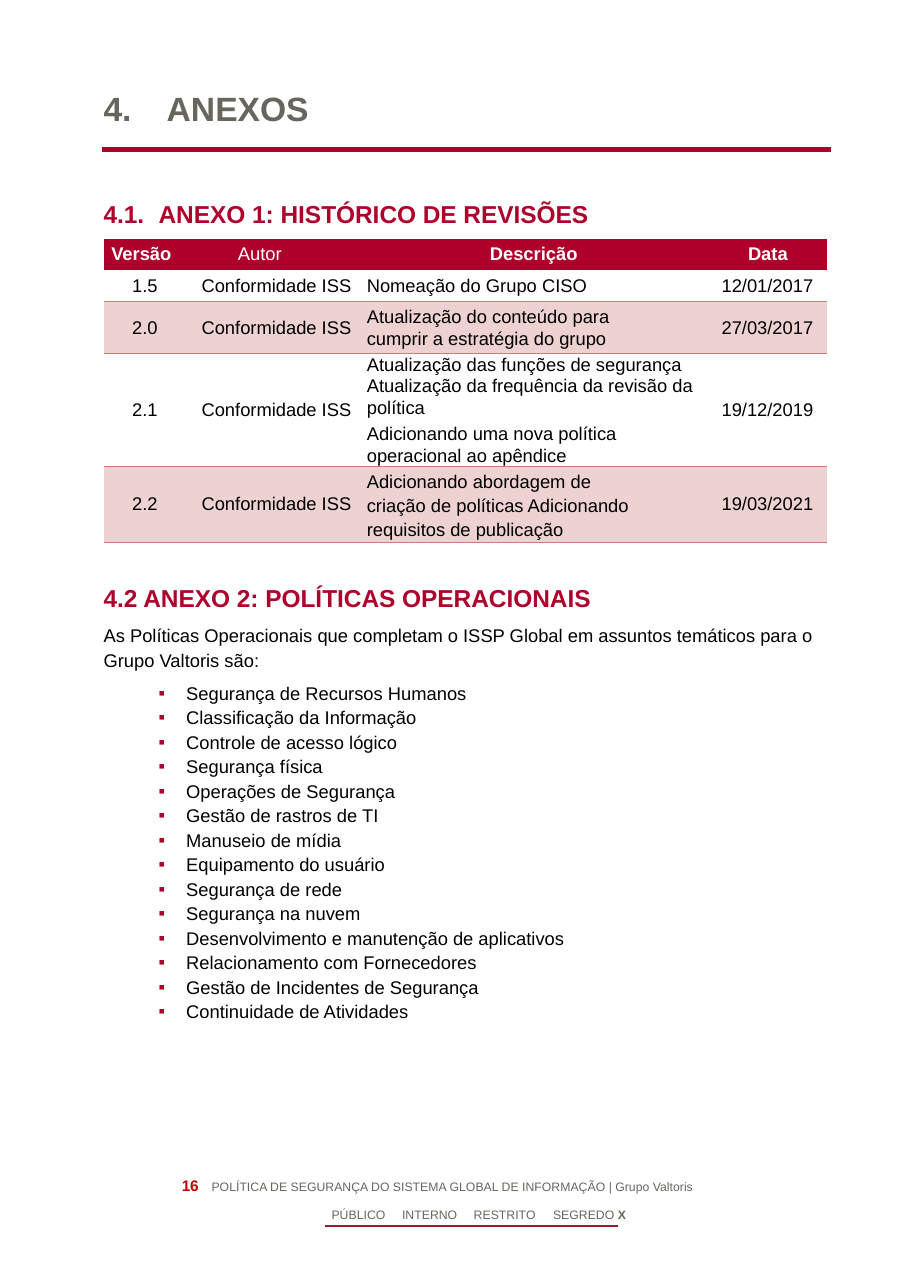
from lxml.etree import SubElement
from pptx import Presentation
from pptx.dml.color import RGBColor
from pptx.enum.shapes import MSO_CONNECTOR as Connector
from pptx.enum.text import MSO_ANCHOR as Anchor, MSO_AUTO_SIZE as AutoSize, PP_ALIGN as Align
from pptx.oxml.ns import qn
from pptx.util import Inches, Pt

COLORS = {
    "crimson": "AF002C", "footer_line": "A11731", "page_number": "C00000",
    "gray": "68665C", "black": "000000", "white": "FFFFFF",
    "band": "EED2D2", "border": "CF7A79",
}
NO_TABLE_STYLE = "{2D5ABB26-0587-4C30-8999-92F81FD0307C}"


def format_paragraph(paragraph, size, color, bold=False, bullet=None):
    """Set indent, bullet, tab stop and font of a paragraph."""
    properties = paragraph._p.get_or_add_pPr()
    properties.set("marL", str(Inches(0.75) if bullet else 0))
    properties.set("indent", str(Inches(-0.25) if bullet else 0))
    if bullet:
        bullet_color = SubElement(properties, qn("a:buClr"))
        SubElement(bullet_color, qn("a:srgbClr"), val=COLORS["crimson"])
        SubElement(properties, qn("a:buFont"), typeface="Arial")
        SubElement(properties, qn("a:buChar"), char=bullet)
    else:
        SubElement(properties, qn("a:buNone"))
    if "\t" in paragraph.text:
        tab_list = SubElement(properties, qn("a:tabLst"))
        SubElement(tab_list, qn("a:tab"), pos=str(Inches(0.5)), algn="l")
    paragraph.alignment = Align.LEFT
    font = paragraph.font
    font.name, font.size, font.bold = "Arial", Pt(size), bold
    font.color.rgb = RGBColor.from_string(COLORS[color])


def place_frame(shape, left, top, width, height):
    """Move a text shape and clear its insets."""
    shape.left, shape.top = Inches(left), Inches(top)
    shape.width, shape.height = Inches(width), Inches(height)
    frame = shape.text_frame
    frame.margin_left = frame.margin_right = frame.margin_top = frame.margin_bottom = 0
    frame.word_wrap = True
    frame.auto_size = AutoSize.NONE
    frame.vertical_anchor = Anchor.TOP
    return frame


presentation = Presentation()
presentation.slide_width, presentation.slide_height = Inches(8.26), Inches(11.69)
slide = presentation.slides.add_slide(presentation.slide_layouts[1])
shapes = slide.shapes

# Title
title_frame = place_frame(shapes.title, 0.94, 0.8, 6.6, 0.36)
title_frame.text = "4.\t ANEXOS"
format_paragraph(title_frame.paragraphs[0], 22, "gray", True)

# Rules under the title and the footer
for left, right, top, color, weight in [
    (0.93, 7.54, 1.36, "crimson", 3.1),
    (2.95, 5.61, 11.13, "footer_line", 1.6),
]:
    rule = shapes.add_connector(
        Connector.STRAIGHT, Inches(left), Inches(top), Inches(right), Inches(top))
    rule.line.color.rgb = RGBColor.from_string(COLORS[color])
    rule.line.width = Pt(weight)
    SubElement(rule._element.spPr, qn("a:effectLst"))

# Section heading, footer texts and classification levels
for text, left, top, width, height, size, color, bold in [
    ("4.1.\tANEXO 1: HISTÓRICO DE REVISÕES", 0.94, 1.81, 6.4, 0.27, 16, "crimson", True),
    ("16", 1.65, 10.68, 0.21, 0.17, 10, "page_number", True),
    ("POLÍTICA DE SEGURANÇA DO SISTEMA GLOBAL DE INFORMAÇÃO | Grupo Valtoris",
     1.92, 10.7, 4.88, 0.13, 8, "gray", False),
    ("PÚBLICO", 3.01, 10.96, 0.6, 0.13, 8, "gray", False),
    ("INTERNO", 3.65, 10.96, 0.6, 0.13, 8, "gray", False),
    ("RESTRITO", 4.3, 10.96, 0.65, 0.13, 8, "gray", False),
    ("SEGREDO ", 5.02, 10.96, 0.9, 0.13, 8, "gray", False),
]:
    frame = place_frame(shapes.add_textbox(0, 0, 0, 0), left, top, width, height)
    frame.text = text
    format_paragraph(frame.paragraphs[0], size, color, bold)
chosen_level = frame.paragraphs[0].add_run()
chosen_level.text = "X"
chosen_level.font.bold = True

# Revision table
author = "Conformidade ISS"
rows = [
    ("Versão", "Autor", "Descrição", "Data"),
    ("1.5", author, "Nomeação do Grupo CISO", "12/01/2017"),
    ("2.0", author, "Atualização do conteúdo para cumprir a estratégia do grupo", "27/03/2017"),
    ("2.1", author, "Atualização das funções de segurança\n"
     "Atualização da frequência da revisão da política\n"
     "Adicionando uma nova política operacional ao apêndice", "19/12/2019"),
    ("2.2", author, "Adicionando abordagem de criação de políticas "
     "Adicionando requisitos de publicação", "19/03/2021"),
]
row_heights = [0.28, 0.29, 0.47, 1.02, 0.69]
column_widths = [0.77, 1.5, 3.2, 1.1]
header_margins = [0.07, 0.45, 0.07, 0.38]
body_margins = [0.26, 0.12, 0.12, 0.14]
description_right_margins = [0, 0, 0.6, 0.1, 0.6]
description_spacings = [1.0, 1.0, Pt(13.8), Pt(14), 1.17]

table = shapes.add_table(
    len(rows), len(column_widths), Inches(0.94), Inches(2.17),
    Inches(sum(column_widths)), Inches(sum(row_heights))).table
table.first_row = table.horz_banding = False
table._tbl.tblPr.find(qn("a:tableStyleId")).text = NO_TABLE_STYLE
for column, width in zip(table.columns, column_widths):
    column.width = Inches(width)

for row_index, texts in enumerate(rows):
    table.rows[row_index].height = Inches(row_heights[row_index])
    is_header = row_index == 0
    for column_index, text in enumerate(texts):
        cell = table.cell(row_index, column_index)
        margins = header_margins if is_header else body_margins
        is_description = column_index == 2
        cell.margin_left = Inches(margins[column_index])
        cell.margin_right = Inches(description_right_margins[row_index] if is_description else 0)
        cell.margin_top = cell.margin_bottom = 0
        cell.vertical_anchor = Anchor.MIDDLE
        cell.text = text
        for paragraph in cell.text_frame.paragraphs:
            format_paragraph(paragraph, 12, "white" if is_header else "black",
                             is_header and text != "Autor")
            if is_description:
                paragraph.line_spacing = description_spacings[row_index]
        if is_description and is_header:
            paragraph.alignment = Align.CENTER
        if len(cell.text_frame.paragraphs) > 1:
            paragraph.space_before = Pt(3.4)

        # Bottom border comes before the fill in the cell properties
        if not is_header:
            border = SubElement(cell._tc.get_or_add_tcPr(), qn("a:lnB"), w=str(Pt(0.6)))
            border_fill = SubElement(border, qn("a:solidFill"))
            SubElement(border_fill, qn("a:srgbClr"), val=COLORS["border"])
        if is_header or row_index % 2 == 0:
            cell.fill.solid()
            cell.fill.fore_color.rgb = RGBColor.from_string(
                COLORS["crimson" if is_header else "band"])
        else:
            cell.fill.background()

# Operational policies
policies = [
    "Segurança de Recursos Humanos", "Classificação da Informação",
    "Controle de acesso lógico", "Segurança física", "Operações de Segurança",
    "Gestão de rastros de TI", "Manuseio de mídia", "Equipamento do usuário",
    "Segurança de rede", "Segurança na nuvem",
    "Desenvolvimento e manutenção de aplicativos", "Relacionamento com Fornecedores",
    "Gestão de Incidentes de Segurança", "Continuidade de Atividades",
]
body_frame = place_frame(slide.placeholders[1], 0.94, 5.29, 6.6, 4.11)
body_frame.text = "\n".join([
    "4.2 ANEXO 2: POLÍTICAS OPERACIONAIS",
    "As Políticas Operacionais que completam o ISSP Global em assuntos temáticos para o "
    "Grupo Valtoris são:",
    *policies,
])
heading, introduction, *items = body_frame.paragraphs
format_paragraph(heading, 16, "crimson", True)
heading.space_before = Pt(0)
format_paragraph(introduction, 12, "black")
introduction.line_spacing = 1.12
introduction.space_before = Pt(6.2)
for index, item in enumerate(items):
    format_paragraph(item, 12, "black", bullet="▪")
    item.line_spacing = Pt(14)
    item.space_before = Pt(2 if index else 7.5)

presentation.save("out.pptx")
